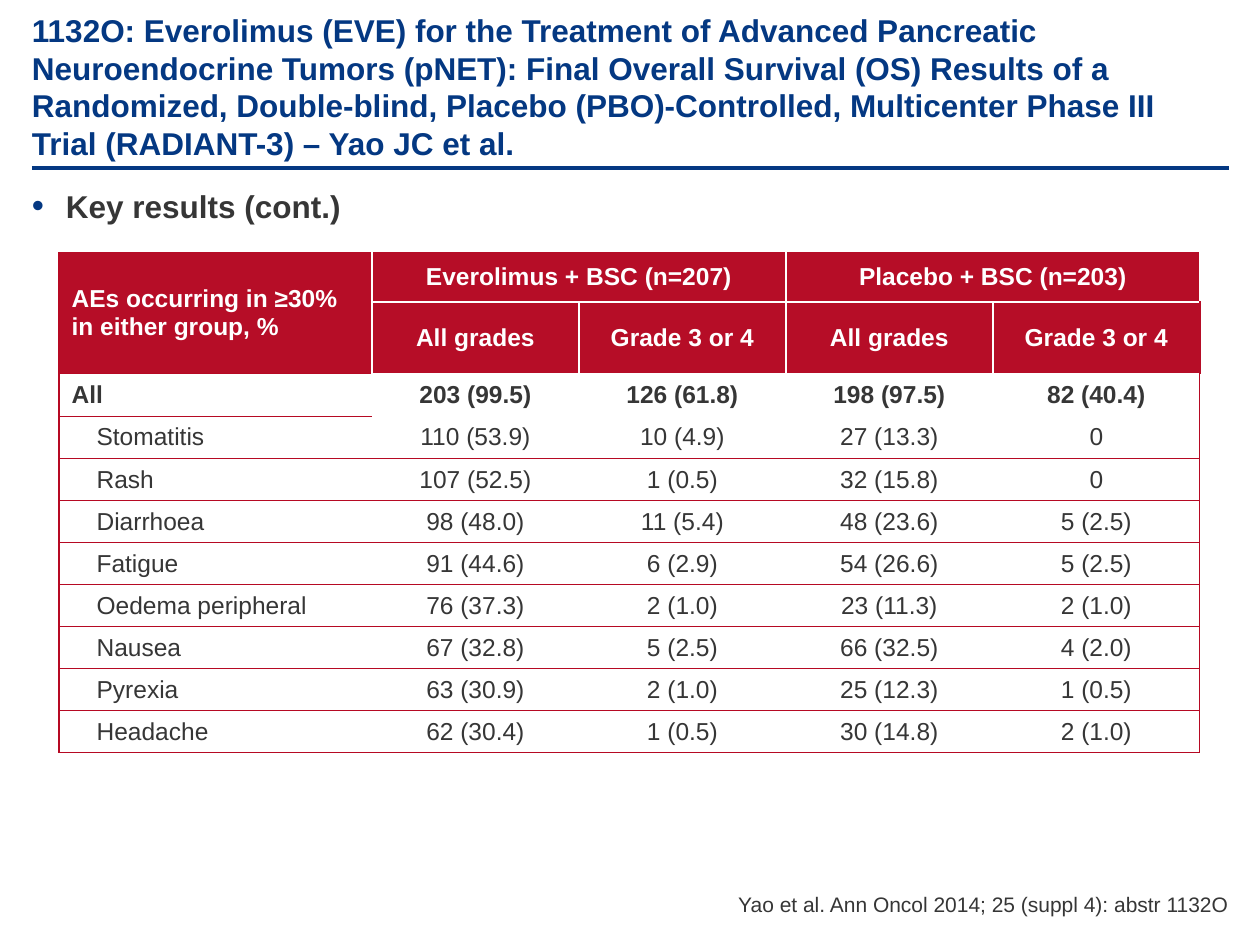
from lxml.etree import SubElement
from pptx import Presentation
from pptx.dml.color import RGBColor
from pptx.enum.text import MSO_ANCHOR, PP_ALIGN
from pptx.oxml.ns import qn
from pptx.util import Emu, Pt

THEME = {
    "font": "Arial", "navy": "043882", "ink": "363636", "white": "FFFFFF",
    "header": "B60D27", "rule": "B60923",
    "heading_pt": 18, "table_pt": 14, "source_pt": 12,
}
PX = 914400 / 126


def write(tf, text, size, color, bold=False, align=PP_ALIGN.LEFT):
    p = tf.paragraphs[0]
    p.text = text
    p.alignment = align
    p.font.name = THEME["font"]
    p.font.size = Pt(THEME[size])
    p.font.bold = bold
    p.font.color.rgb = RGBColor.from_string(THEME[color])
    return p


def set_borders(cell, **sides):
    """Draw the sides given as L, R, T, B = (theme colour, points); None leaves a side out."""
    tcPr = cell._tc.get_or_add_tcPr()
    for side in "LRTB":
        ln = SubElement(tcPr, qn(f"a:ln{side}"))
        if sides.get(side) is None:
            SubElement(ln, qn("a:noFill"))
            continue
        color, width = sides[side]
        ln.set("w", str(Pt(width)))
        fill = SubElement(ln, qn("a:solidFill"))
        SubElement(fill, qn("a:srgbClr"), val=THEME[color])


prs = Presentation()
prs.slide_width, prs.slide_height = Emu(round(1260 * PX)), Emu(round(945 * PX))
s = prs.slides.add_slide(prs.slide_layouts[6])

# Heading, key results and source
texts = [
    ((32, 32, 1197, 130), "1132O: Everolimus (EVE) for the Treatment of Advanced Pancreatic "
     "Neuroendocrine Tumors (pNET): Final Overall Survival (OS) Results of a Randomized, "
     "Double-blind, Placebo (PBO)-Controlled, Multicenter Phase III Trial (RADIANT-3) "
     "– Yao JC et al.",
     "heading_pt", "navy", True, PP_ALIGN.LEFT, MSO_ANCHOR.BOTTOM, (6, 0)),
    ((32, 181, 1197, 732), "Key results (cont.)",
     "heading_pt", "ink", True, PP_ALIGN.LEFT, MSO_ANCHOR.TOP, (6, 6)),
    ((722, 892, 507, 25), "Yao et al. Ann Oncol 2014; 25 (suppl 4): abstr 1132O",
     "source_pt", "ink", False, PP_ALIGN.RIGHT, MSO_ANCHOR.BOTTOM, (0, 0)),
]
for box, text, size, color, bold, align, anchor, (top, bottom) in texts:
    tf = s.shapes.add_textbox(*(Emu(round(v * PX)) for v in box)).text_frame
    tf.word_wrap = size != "source_pt"
    tf.vertical_anchor = anchor
    tf.margin_left = tf.margin_right = 0
    tf.margin_top, tf.margin_bottom = Emu(round(top * PX)), Emu(round(bottom * PX))
    p = write(tf, text, size, color, bold, align)
    if text.startswith("Key results"):
        p.space_after = Pt(6)
        pPr = p._p.get_or_add_pPr()
        indent = round(34 * PX)
        pPr.set("marL", str(indent))
        pPr.set("indent", str(-indent))
        bullet_color = pPr.makeelement(qn("a:buClr"), {})
        SubElement(bullet_color, qn("a:srgbClr"), val=THEME["navy"])
        bullet = [bullet_color,
                  pPr.makeelement(qn("a:buSzPct"), {"val": "110000"}),
                  pPr.makeelement(qn("a:buFont"), {"typeface": THEME["font"]}),
                  pPr.makeelement(qn("a:buChar"), {"char": "•"})]
        for element in bullet:
            pPr.insert_element_before(element, "a:tabLst", "a:defRPr", "a:extLst")

# Rule under the heading
x1, x2, y = (Emu(round(v * PX)) for v in (32, 1229, 168))
rule = s.shapes.add_connector(1, x1, y, x2, y)
rule.line.color.rgb = RGBColor.from_string(THEME["navy"])
rule.line.width = Pt(2.25)
SubElement(rule._element.spPr, qn("a:effectLst"))

# Adverse events table
rows = [
    ["AEs occurring in ≥30% in either group, %",
     "Everolimus + BSC (n=207)", "", "Placebo + BSC (n=203)", ""],
    ["", "All grades", "Grade 3 or 4", "All grades", "Grade 3 or 4"],
    ["All", "203 (99.5)", "126 (61.8)", "198 (97.5)", "82 (40.4)"],
    ["Stomatitis", "110 (53.9)", "10 (4.9)", "27 (13.3)", "0"],
    ["Rash", "107 (52.5)", "1 (0.5)", "32 (15.8)", "0"],
    ["Diarrhoea", "98 (48.0)", "11 (5.4)", "48 (23.6)", "5 (2.5)"],
    ["Fatigue", "91 (44.6)", "6 (2.9)", "54 (26.6)", "5 (2.5)"],
    ["Oedema peripheral", "76 (37.3)", "2 (1.0)", "23 (11.3)", "2 (1.0)"],
    ["Nausea", "67 (32.8)", "5 (2.5)", "66 (32.5)", "4 (2.0)"],
    ["Pyrexia", "63 (30.9)", "2 (1.0)", "25 (12.3)", "1 (0.5)"],
    ["Headache", "62 (30.4)", "1 (0.5)", "30 (14.8)", "2 (1.0)"],
]
widths = [313] + [207] * 4
heights = [49, 71, 43] + [42] * 8
HEADER_ROWS, TOTAL_ROW, LAST_COL = 2, 2, len(widths) - 1

box = (59, 253, sum(widths), sum(heights))
tbl = s.shapes.add_table(len(rows), len(widths), *(Emu(round(v * PX)) for v in box)).table
tbl.first_row = tbl.horz_banding = False
for col, w in zip(tbl.columns, widths):
    col.width = Emu(round(w * PX))
for row, h in zip(tbl.rows, heights):
    row.height = Emu(round(h * PX))

red, white, edge = ("rule", 0.75), ("white", 1), ("header", 1)
for i, row in enumerate(rows):
    for j, text in enumerate(row):
        cell = tbl.cell(i, j)
        header = i < HEADER_ROWS
        cell.vertical_anchor = MSO_ANCHOR.MIDDLE
        p = write(cell.text_frame, text, "table_pt", "white" if header else "ink",
                  i <= TOTAL_ROW, PP_ALIGN.CENTER if j else PP_ALIGN.LEFT)
        if j == 0 and i > TOTAL_ROW:
            p._p.get_or_add_pPr().set("marL", str(round(25 * PX)))
        if header:
            set_borders(cell, L=white if j else red,
                        R=edge if j == LAST_COL else white,
                        T=white if i and j else edge,
                        B=white if j else red)
            cell.fill.solid()
            cell.fill.fore_color.rgb = RGBColor.from_string(THEME["header"])
        else:
            above = white if j else red
            if i > TOTAL_ROW + 1 or j == 0:
                above = red
            elif i == TOTAL_ROW + 1:
                above = None
            set_borders(cell, L=None if j else red,
                        R=red if j == LAST_COL else None,
                        T=above,
                        B=None if i == TOTAL_ROW and j else red)
            cell.fill.background()

tbl.cell(0, 0).merge(tbl.cell(1, 0))
for j in (1, 3):
    tbl.cell(0, j).merge(tbl.cell(0, j + 1))

prs.save("out.pptx")
